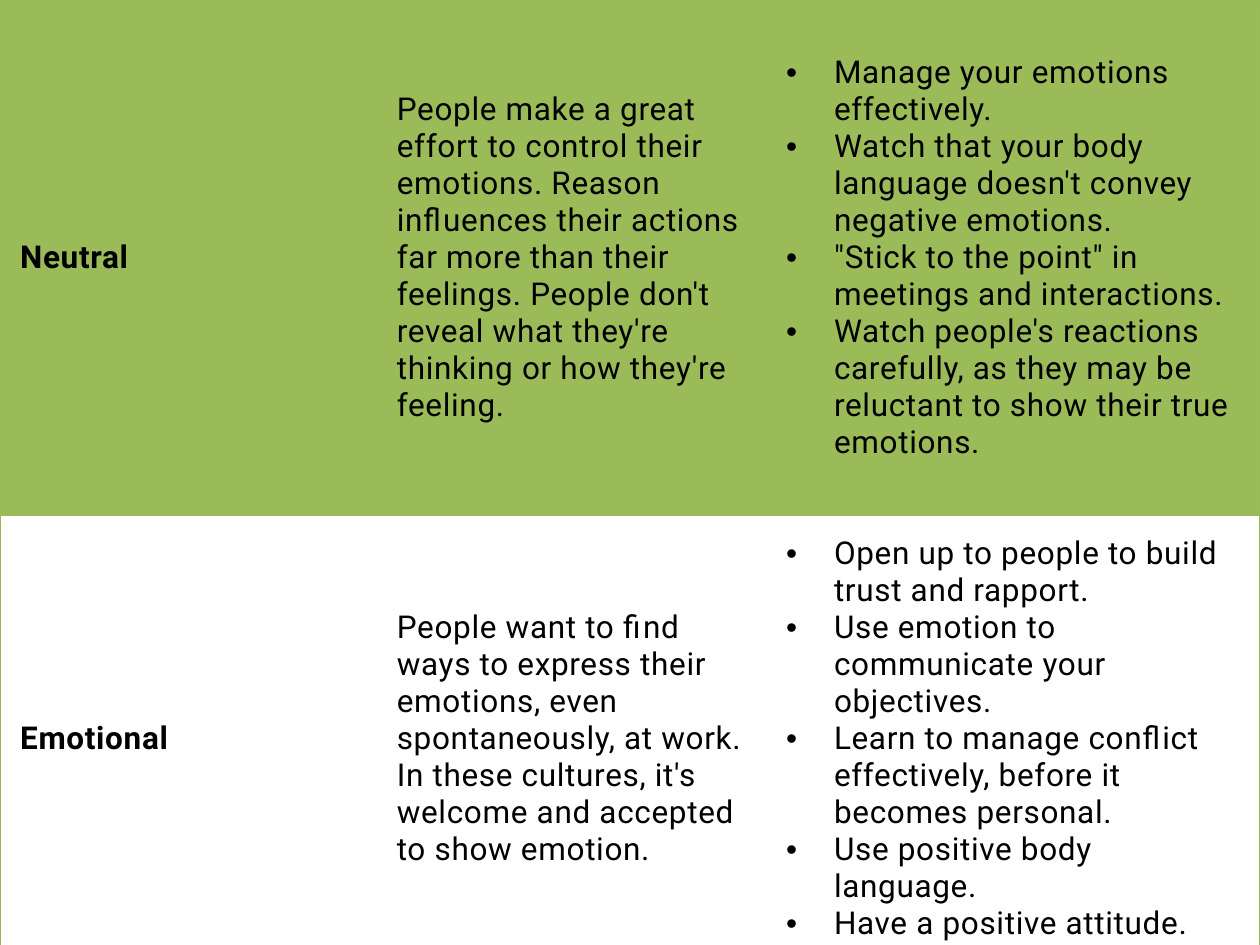
from lxml.etree import SubElement
from pptx import Presentation
from pptx.dml.color import RGBColor
from pptx.enum.text import MSO_ANCHOR
from pptx.oxml import parse_xml
from pptx.oxml.ns import nsdecls, qn
from pptx.util import Inches, Pt

COLORS = {"band": "9BBB59", "plain": "FFFFFF", "border": "98B955", "text": "000000"}
FONT = "Roboto"
NO_STYLE = "{2D5ABB26-0587-4C30-8999-92F81FD0307C}"
WIDTH, HEIGHT = 10, 7.5
COLUMN_WIDTHS = [2.99, 3.09, 3.92]
ROW_HEIGHTS = [4.09, 3.41]
MARGIN, INDENT, TAB = 0.16, 0.38, 0.5

# Each row: name, description, advice
ORIENTATIONS = [
    ("Neutral",
     "People make a great effort to control their emotions. Reason influences their "
     "actions far more than their feelings. People don't reveal what they're thinking "
     "or how they're feeling.",
     ["Manage your emotions effectively.",
      "Watch that your body language doesn't convey negative emotions.",
      "\"Stick to the point\" in meetings and interactions.",
      "Watch people's reactions carefully, as they may be reluctant to show their "
      "true emotions."]),
    ("Emotional",
     "People want to find ways to express their emotions, even spontaneously, at work. "
     "In these cultures, it's welcome and accepted to show emotion.",
     ["Open up to people to build trust and rapport.",
      "Use emotion to communicate your objectives.",
      "Learn to manage conflict effectively, before it becomes personal.",
      "Use positive body language.",
      "Have a positive attitude."]),
]


def add_bullet(paragraph):
    properties = paragraph._p.get_or_add_pPr()
    properties.set("marL", str(Inches(INDENT)))
    properties.set("indent", str(-Inches(INDENT)))
    SubElement(properties, qn("a:buFont"), typeface="Arial")
    SubElement(properties, qn("a:buChar"), char="•")
    tabs = SubElement(properties, qn("a:tabLst"))
    SubElement(tabs, qn("a:tab"), pos=str(Inches(TAB)), algn="l")


def write_cell(cell, texts, bold, bulleted):
    cell.vertical_anchor = MSO_ANCHOR.MIDDLE
    cell.margin_left = cell.margin_right = Inches(MARGIN)
    cell.margin_top = cell.margin_bottom = Inches(MARGIN)
    frame = cell.text_frame
    for index, text in enumerate(texts):
        paragraph = frame.add_paragraph() if index else frame.paragraphs[0]
        if bulleted:
            add_bullet(paragraph)
        run = paragraph.add_run()
        run.text = text
        run.font.name = FONT
        run.font.size = Pt(18)
        run.font.bold = bold
        run.font.color.rgb = RGBColor.from_string(COLORS["text"])
        run.font._element.set("spc", "40")


def paint_cell(cell, color, sides):
    cell.fill.solid()
    cell.fill.fore_color.rgb = RGBColor.from_string(color)
    properties = cell._tc.get_or_add_tcPr()
    for index, side in enumerate(sides):
        properties.insert(index, parse_xml(
            f'<a:ln{side} {nsdecls("a")} w="{Pt(0.75)}"><a:solidFill>'
            f'<a:srgbClr val="{COLORS["border"]}"/></a:solidFill></a:ln{side}>'))


presentation = Presentation()
presentation.slide_width, presentation.slide_height = Inches(WIDTH), Inches(HEIGHT)
slide = presentation.slides.add_slide(presentation.slide_layouts[6])

# Table filling the slide
shape = slide.shapes.add_table(len(ROW_HEIGHTS), len(COLUMN_WIDTHS), 0, 0,
                               Inches(WIDTH), Inches(HEIGHT))
table = shape.table
table.first_row = table.horz_banding = False
for style in shape._element.iter(qn("a:tableStyleId")):
    style.text = NO_STYLE
for column, width in zip(table.columns, COLUMN_WIDTHS):
    column.width = Inches(width)
for row, height in zip(table.rows, ROW_HEIGHTS):
    row.height = Inches(height)

# Cell content, fills and outer borders
last_row, last_column = len(ROW_HEIGHTS) - 1, len(COLUMN_WIDTHS) - 1
for r, (name, description, advice) in enumerate(ORIENTATIONS):
    for c, texts in enumerate([[name], [description], advice]):
        cell = table.cell(r, c)
        write_cell(cell, texts, bold=c == 0, bulleted=c == last_column)
        edges = {"L": c == 0, "R": c == last_column, "T": True, "B": r == last_row}
        paint_cell(cell, COLORS["plain" if r else "band"],
                   [side for side, drawn in edges.items() if drawn])

presentation.save("out.pptx")
